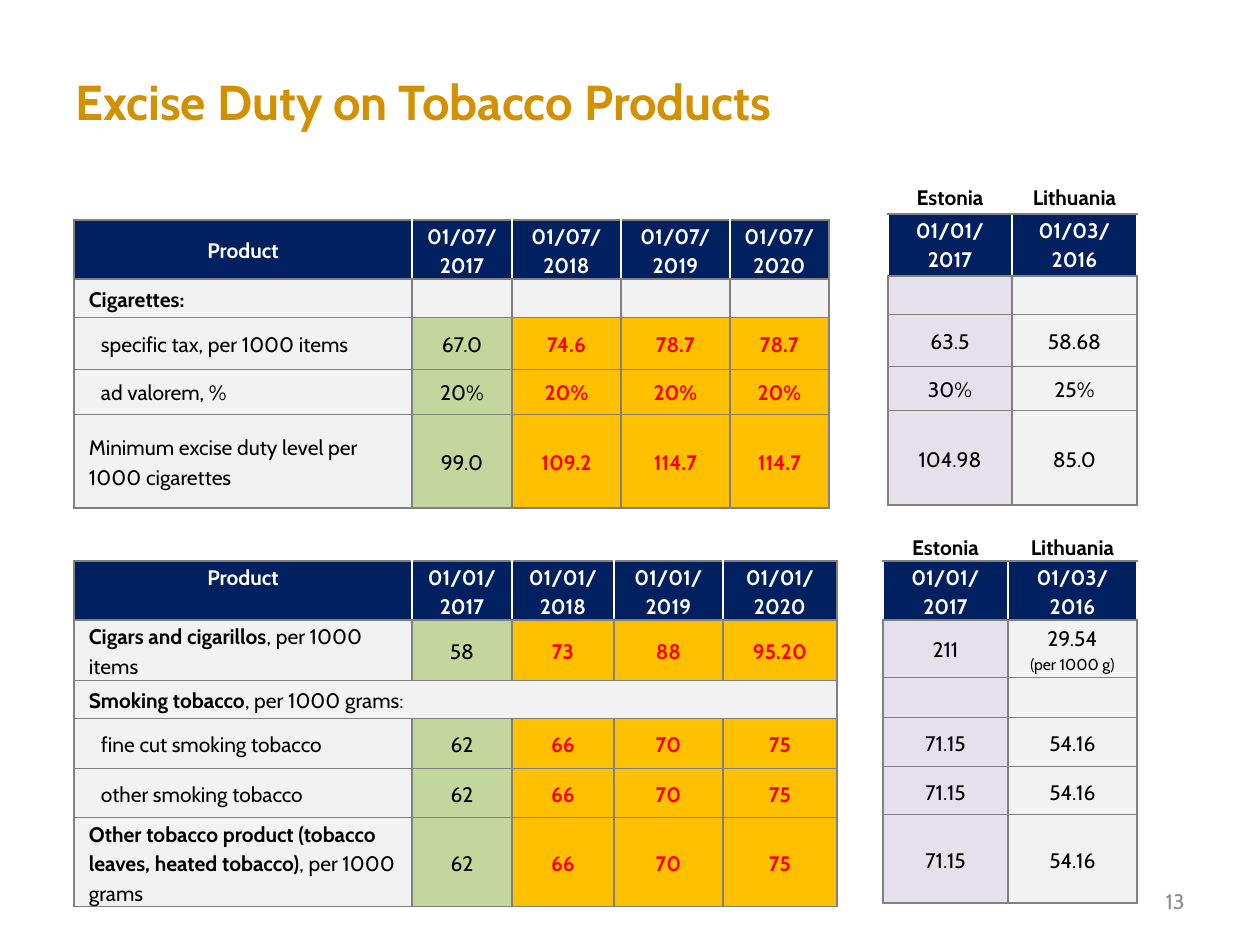
from lxml import etree
from pptx import Presentation
from pptx import util as u
from pptx.dml.color import RGBColor
from pptx.enum import text
from pptx.oxml.ns import qn

PX = 914400 // 126
FONT = "Cabin"
WHITE, BLACK, NAVY, GREY, RED = "FFFFFF", "000000", "002060", "808080", "FF0000"
LIGHT, GREEN, AMBER, LILAC = "F2F2F2", "C3D69B", "FFC000", "E6E0EC"


def style(font, size, color, bold=False):
    font.name, font.size, font.bold = FONT, u.Pt(size), bold
    font.color.rgb = RGBColor.from_string(color)


def set_borders(cell, left, right, top, bottom):
    """Each side is a colour and a width in points."""
    properties = cell._tc.get_or_add_tcPr()
    sides = zip(("lnL", "lnR", "lnT", "lnB"), (left, right, top, bottom))
    for index, (tag, (color, width)) in enumerate(sides):
        line = etree.Element(qn("a:" + tag), w=str(u.Pt(width)))
        fill = etree.SubElement(line, qn("a:solidFill"))
        etree.SubElement(fill, qn("a:srgbClr"), val=color)
        properties.insert(index, line)


presentation = Presentation()
presentation.slide_width, presentation.slide_height = 1260 * PX, 945 * PX
slide = presentation.slides.add_slide(presentation.slide_layouts[5])

# Title
title = slide.shapes.title
title.left, title.top, title.width, title.height = 63 * PX, 66 * PX, 825 * PX, 69 * PX
title.fill.solid()
title.fill.fore_color.rgb = RGBColor.from_string(WHITE)
title.text_frame.text = "Excise Duty on Tobacco Products"
title.text_frame.vertical_anchor = text.MSO_ANCHOR.MIDDLE
paragraph = title.text_frame.paragraphs[0]
paragraph.alignment = text.PP_ALIGN.LEFT
style(paragraph.font, 28, "D39001", True)

# Tables: "\n" splits paragraphs, "|" ends a bold lead, ">" marks a sub-item
main_fills = [LIGHT, GREEN, AMBER, AMBER, AMBER]
side_fills = [LILAC, LIGHT]
countries = ["Estonia", "Lithuania"]
country_dates = ["01/01/\n2017", "01/03/\n2016"]
years = range(2017, 2021)
tables = [
    dict(left=74, top=220, columns=[338, 100, 109, 109, 99],
         heights=[59, 38, 52, 45, 94], fills=main_fills, rows=[
             ["Product"] + [f"01/07/\n{year}" for year in years],
             ["Cigarettes:|", "", "", "", ""],
             [">specific tax, per 1000 items", "67.0", "74.6", "78.7", "78.7"],
             [">ad valorem, %", "20%", "20%", "20%", "20%"],
             ["Minimum excise duty level per 1000 cigarettes",
              "99.0", "109.2", "114.7", "114.7"]]),
    dict(left=74, top=561, columns=[338, 100, 102, 109, 114],
         heights=[59, 60, 38, 50, 50, 88], fills=main_fills, rows=[
             ["Product"] + [f"01/01/\n{year}" for year in years],
             ["Cigars and cigarillos|, per 1000 items", "58", "73", "88", "95.20"],
             ["Smoking tobacco|, per 1000 grams:"],
             [">fine cut smoking tobacco", "62", "66", "70", "75"],
             [">other smoking tobacco", "62", "66", "70", "75"],
             ["Other tobacco product (tobacco leaves, heated tobacco)|, per 1000 grams",
              "62", "66", "70", "75"]]),
    dict(left=888, top=179, columns=[124, 125],
         heights=[35, 62, 38, 52, 45, 94], fills=side_fills, rows=[
             countries, country_dates, ["", ""],
             ["63.5", "58.68"], ["30%", "25%"], ["104.98", "85.0"]]),
    dict(left=883, top=531, columns=[125, 129],
         heights=[30, 59, 57, 40, 50, 48, 88], fills=side_fills, rows=[
             countries, country_dates, ["211", "29.54\n(per 1000 g)"], ["", ""],
             ["71.15", "54.16"], ["71.15", "54.16"], ["71.15", "54.16"]]),
]

for spec in tables:
    rows, columns, heights = spec["rows"], spec["columns"], spec["heights"]
    is_main = spec["fills"] is main_fills
    header = 0 if is_main else 1
    table = slide.shapes.add_table(
        len(rows), len(columns), spec["left"] * PX, spec["top"] * PX,
        sum(columns) * PX, sum(heights) * PX).table
    table.first_row = table.horz_banding = False
    for column, width in zip(table.columns, columns):
        column.width = width * PX

    for r, values in enumerate(rows):
        table.rows[r].height = heights[r] * PX
        section = is_main and not any(values[1:])
        for c, fill in enumerate(spec["fills"]):
            cell = table.cell(r, c)
            value = values[c] if c < len(values) else ""
            is_label = is_main and c == 0 and r > header

            # Colours and rules by kind of row
            color, bold = BLACK, False
            vertical, top, bottom = (GREY, 1), (GREY, 0.5), (GREY, 0.5)
            if r < header:
                fill, bold, vertical, top, bottom = WHITE, True, (WHITE, 1), (WHITE, 1), (GREY, 1)
            elif r == header:
                fill, color, bold, vertical = NAVY, WHITE, True, (WHITE, 1)
                top = bottom = (GREY, 1)
            elif section:
                fill = LIGHT
            elif fill == AMBER:
                color, bold = RED, True
            if r == header + 1:
                top = (GREY, 1)
            if r == len(rows) - 1:
                bottom = (GREY, 1)
            left = (GREY, 1) if is_main and c == 0 else vertical
            right = (GREY, 1) if is_main and c == len(columns) - 1 else vertical
            cell.fill.solid()
            cell.fill.fore_color.rgb = RGBColor.from_string(fill)
            set_borders(cell, left, right, top, bottom)

            # Text
            cell.margin_left = cell.margin_right = 2 * PX
            cell.margin_top = cell.margin_bottom = 0
            if is_label:
                cell.margin_left = (27 if value.startswith(">") else 15) * PX
            at_top = r == header and (value != "Product" or spec["top"] == 561)
            cell.vertical_anchor = text.MSO_ANCHOR.TOP if at_top else text.MSO_ANCHOR.MIDDLE
            for i, line in enumerate(value.lstrip(">").split("\n")):
                frame = cell.text_frame
                paragraph = frame.add_paragraph() if i else frame.paragraphs[0]
                paragraph.alignment = text.PP_ALIGN.LEFT if is_label else text.PP_ALIGN.CENTER
                paragraph.line_spacing = 1.15
                style(paragraph.font, 9 if line.startswith("(") else 12, color, bold)
                lead, mark, rest = line.partition("|")
                for part, is_lead in ((lead, bool(mark)), (rest, False)):
                    if part:
                        run = paragraph.add_run()
                        run.text = part
                        if is_lead:
                            run.font.bold = True
        if len(values) == 1:
            table.cell(r, 0).merge(table.cell(r, len(columns) - 1))

# Page number
number = slide.shapes.add_textbox(903 * PX, 876 * PX, 294 * PX, 50 * PX).text_frame
number.word_wrap = True
number.vertical_anchor = text.MSO_ANCHOR.MIDDLE
number.text = "13"
number.paragraphs[0].alignment = text.PP_ALIGN.RIGHT
style(number.paragraphs[0].font, 12, "8C8C8C")

presentation.save("out.pptx")
